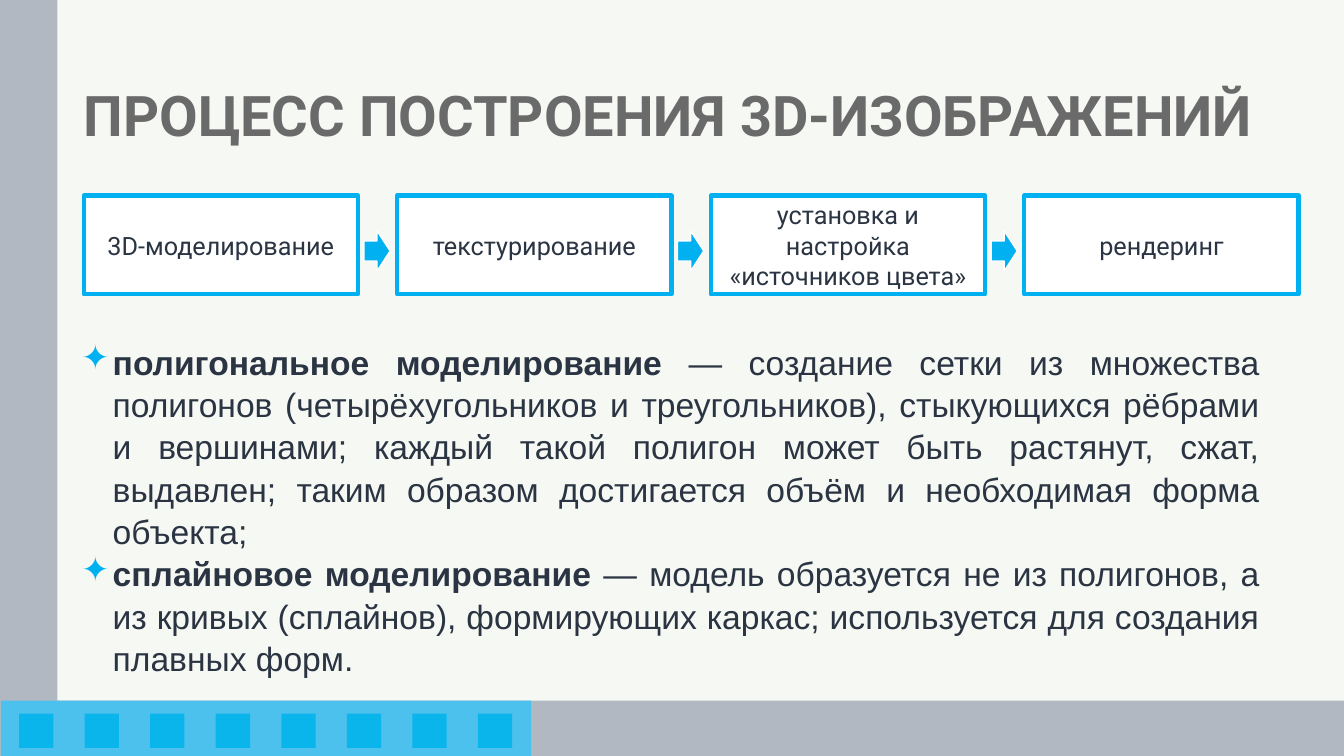
from dataclasses import dataclass
from typing import Any, Optional

from lxml.etree import SubElement
from pptx import Presentation
from pptx.dml.color import RGBColor
from pptx.enum.shapes import MSO_SHAPE
from pptx.enum.text import MSO_ANCHOR, MSO_AUTO_SIZE, PP_ALIGN
from pptx.oxml.ns import qn
from pptx.util import Inches, Pt


@dataclass(frozen=True)
class Theme:
    background: str = "F6F8F3"
    frame: str = "B2B8C2"
    band: str = "4DC1ED"
    square: str = "0AB5EC"
    accent: str = "00B0F0"
    white: str = "FFFFFF"
    heading: str = "6A6A6A"
    ink: str = "2A3442"
    display_font: str = "Roboto"
    body_font: str = "Arial"
    title_size: int = 40
    stage_size: int = 18
    body_size: int = 24


@dataclass(frozen=True)
class Block:
    left: float
    top: float
    width: float
    height: float
    fill: str
    line: Optional[str] = None
    line_width: float = 0
    preset: MSO_SHAPE = MSO_SHAPE.RECTANGLE
    label: str = ""


@dataclass(frozen=True)
class Definition:
    term: str
    meaning: str


THEME = Theme()
STAGES = [
    "3D-моделирование",
    "текстурирование",
    "установка и настройка «источников цвета»",
    "рендеринг",
]
STAGE_LEFT, STAGE_STEP = 0.83, 3.11
ARROW_LEFT = 3.61
SQUARE_LEFT, SQUARE_STEP, SQUARE_COUNT = 0.19, 0.65, 8
DEFINITIONS = [
    Definition(
        "полигональное моделирование ",
        "— создание сетки из множества полигонов (четырёхугольников и "
        "треугольников), стыкующихся рёбрами и вершинами; каждый такой полигон "
        "может быть растянут, сжат, выдавлен; таким образом достигается объём и "
        "необходимая форма объекта;",
    ),
    Definition(
        "сплайновое моделирование ",
        "— модель образуется не из полигонов, а из кривых (сплайнов), формирующих "
        "каркас; используется для создания плавных форм.",
    ),
]


def apply_format(target: Any, values: dict[str, Any]) -> None:
    for attribute, value in values.items():
        setattr(target, attribute, value)


def add_run(paragraph: Any, text: str, font: str, size: int, colour: str,
            bold: bool = False) -> None:
    run = paragraph.add_run()
    run.text = text
    apply_format(run.font, {"name": font, "size": Pt(size), "bold": bold})
    run.font.color.rgb = RGBColor.from_string(colour)


def add_block(slide: Any, block: Block) -> None:
    shape = slide.shapes.add_shape(
        block.preset, Inches(block.left), Inches(block.top),
        Inches(block.width), Inches(block.height))
    shape.shadow.inherit = False
    shape.fill.solid()
    shape.fill.fore_color.rgb = RGBColor.from_string(block.fill)
    if block.line:
        shape.line.color.rgb = RGBColor.from_string(block.line)
        shape.line.width = Pt(block.line_width)
    else:
        shape.line.fill.background()
    if block.label:
        apply_format(shape.text_frame, {
            "word_wrap": True, "vertical_anchor": MSO_ANCHOR.MIDDLE})
        paragraph = shape.text_frame.paragraphs[0]
        paragraph.alignment = PP_ALIGN.CENTER
        add_run(paragraph, block.label, THEME.display_font, THEME.stage_size, THEME.ink)


def add_star_bullet(paragraph: Any) -> None:
    properties = paragraph._p.get_or_add_pPr()
    indent = Inches(0.31)
    properties.set("marL", str(indent))
    properties.set("indent", str(-indent))
    bullet_colour = SubElement(properties, qn("a:buClr"))
    SubElement(bullet_colour, qn("a:srgbClr"), val=THEME.accent)
    SubElement(properties, qn("a:buChar"), char="✦")


def add_frame(slide: Any) -> None:
    """Draw the side and bottom bars with the row of squares."""
    bars = [
        Block(0, 0, 0.57, 7.5, THEME.frame),
        Block(0, 6.95, 13.33, 0.55, THEME.frame),
        Block(0.01, 6.95, 5.26, 0.55, THEME.band),
    ]
    squares = [Block(SQUARE_LEFT + i * SQUARE_STEP, 7.08, 0.34, 0.34, THEME.square)
               for i in range(SQUARE_COUNT)]
    for block in bars + squares:
        add_block(slide, block)


def format_title(slide: Any) -> None:
    title = slide.shapes.title
    apply_format(title, {"left": Inches(0.73), "top": Inches(0.45),
                         "width": Inches(11.88), "height": Inches(1.45)})
    apply_format(title.text_frame, {
        "word_wrap": True, "auto_size": MSO_AUTO_SIZE.NONE,
        "vertical_anchor": MSO_ANCHOR.MIDDLE})
    paragraph = title.text_frame.paragraphs[0]
    apply_format(paragraph, {"alignment": PP_ALIGN.JUSTIFY, "line_spacing": 0.9})
    add_run(paragraph, "ПРОЦЕСС ПОСТРОЕНИЯ 3D-ИЗОБРАЖЕНИЙ",
            THEME.display_font, THEME.title_size, THEME.heading, bold=True)


def add_stages(slide: Any) -> None:
    for i, stage in enumerate(STAGES):
        add_block(slide, Block(STAGE_LEFT + i * STAGE_STEP, 1.94, 2.72, 0.98,
                               THEME.white, THEME.accent, 3, label=stage))
    for i in range(len(STAGES) - 1):
        add_block(slide, Block(ARROW_LEFT + i * STAGE_STEP, 2.29, 0.26, 0.4,
                               THEME.accent, THEME.white, 1, MSO_SHAPE.RIGHT_ARROW))


def add_definitions(slide: Any) -> None:
    frame = slide.shapes.add_textbox(
        Inches(0.71), Inches(3.32), Inches(11.88), Inches(3.64)).text_frame
    frame.word_wrap = True
    for i, definition in enumerate(DEFINITIONS):
        paragraph = frame.add_paragraph() if i else frame.paragraphs[0]
        apply_format(paragraph, {"alignment": PP_ALIGN.JUSTIFY, "line_spacing": 1.05})
        add_star_bullet(paragraph)
        for text, bold in ((definition.term, True), (definition.meaning, False)):
            add_run(paragraph, text, THEME.body_font, THEME.body_size, THEME.ink, bold)


def main() -> None:
    presentation = Presentation()
    apply_format(presentation, {"slide_width": Inches(13.33),
                                "slide_height": Inches(7.5)})
    slide = presentation.slides.add_slide(presentation.slide_layouts[5])
    slide.background.fill.solid()
    slide.background.fill.fore_color.rgb = RGBColor.from_string(THEME.background)
    add_frame(slide)
    format_title(slide)
    add_stages(slide)
    add_definitions(slide)
    presentation.save("out.pptx")


if __name__ == "__main__":
    main()
